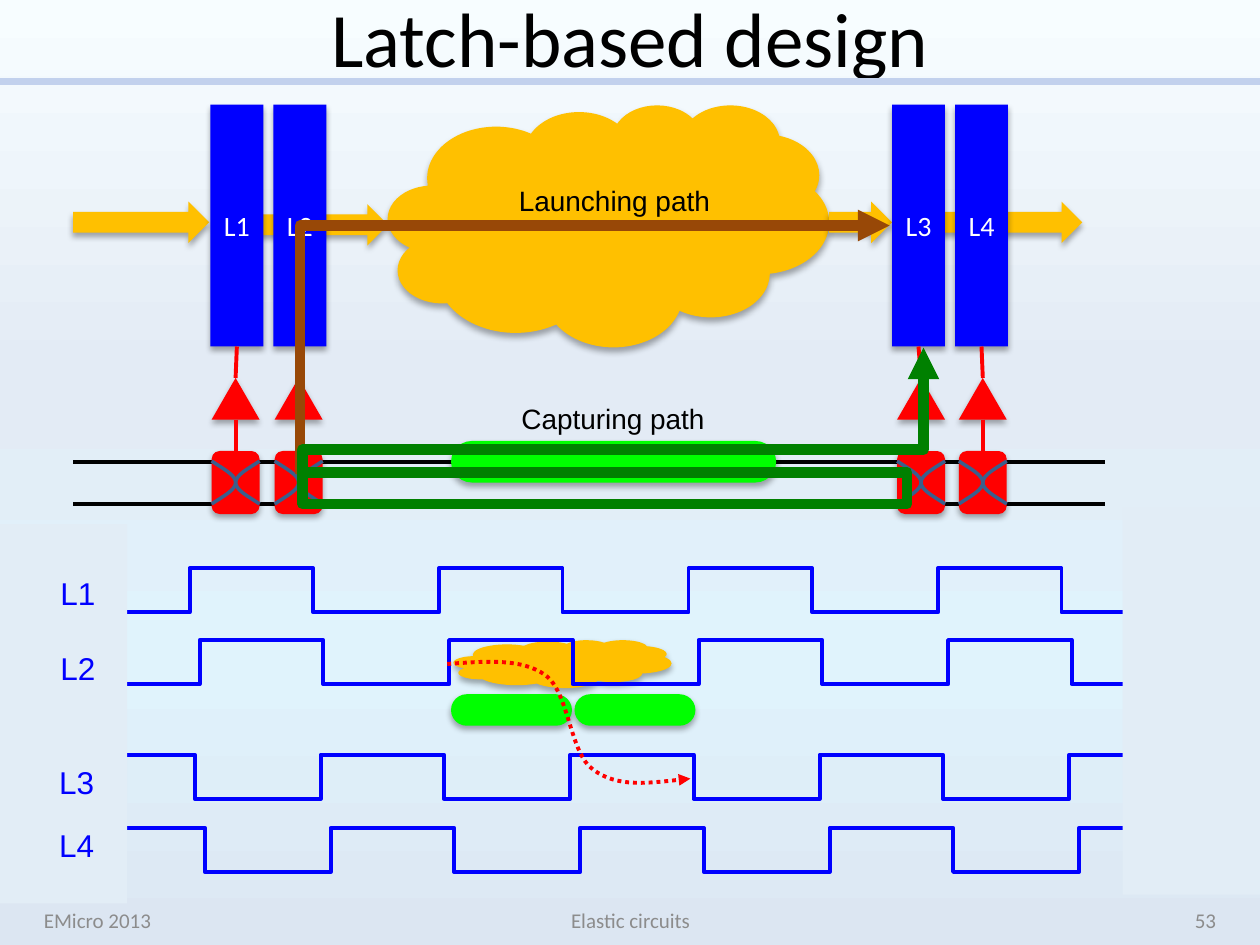
"""Build the latch-based design slide with its datapath, clock waves and timing paths."""
import lxml.etree
import pptx
import pptx.dml.color
import pptx.enum.dml
import pptx.enum.shapes
import pptx.enum.text
import pptx.oxml.ns
import pptx.util

PX = 9144
RGB = pptx.dml.color.RGBColor
BLACK, WHITE, GRAY = RGB(0, 0, 0), RGB(255, 255, 255), RGB(0x8C, 0x8C, 0x8C)
BLUE, RED, LIME = RGB(0, 0, 255), RGB(255, 0, 0), RGB(0, 255, 0)
GOLD, BROWN, GREEN = RGB(0xFF, 0xC0, 0), RGB(0x98, 0x48, 0x07), RGB(0, 0x80, 0)
STEEL, RULE, COVER = RGB(0x3A, 0x5F, 0x8C), RGB(0xC2, 0xD1, 0xED), RGB(0xE2, 0xED, 0xF6)
SKY = [(0, RGB(0xF7, 0xFD, 0xFF)), (40, RGB(0xE3, 0xEB, 0xF5)),
       (70, RGB(0xE0, 0xF3, 0xFC)), (100, RGB(0xDC, 0xE6, 0xF2))]
SHAPE = pptx.enum.shapes.MSO_SHAPE
STRAIGHT = pptx.enum.shapes.MSO_CONNECTOR.STRAIGHT
ELBOW = pptx.enum.shapes.MSO_CONNECTOR.ELBOW
LEFT, CENTER, RIGHT = (pptx.enum.text.PP_ALIGN.LEFT, pptx.enum.text.PP_ALIGN.CENTER,
                       pptx.enum.text.PP_ALIGN.RIGHT)
MIDDLE, TOP = pptx.enum.text.MSO_ANCHOR.MIDDLE, pptx.enum.text.MSO_ANCHOR.TOP
qn = pptx.oxml.ns.qn
sub = lxml.etree.SubElement

prs = pptx.Presentation()
prs.slide_width, prs.slide_height = 1000 * PX, 750 * PX
s = prs.slides.add_slide(prs.slide_layouts[5])

fill = s.background.fill
fill.gradient()
fill.gradient_angle = 270
stops = s._element.xpath(".//a:gsLst")[0]
for stop in list(stops):
    stops.remove(stop)
for pos, color in SKY:
    stop = sub(stops, qn("a:gs"), pos=str(pos * 1000))
    sub(stop, qn("a:srgbClr"), val=str(color))


def add_block(kind, box, color, shadow=True):
    sp = s.shapes.add_shape(kind, *(v * PX for v in box))
    sp.fill.solid()
    sp.fill.fore_color.rgb = color
    sp.line.fill.background()
    sp.shadow.inherit = False
    if shadow:
        effects = sp._element.spPr.find(qn("a:effectLst"))
        outer = sub(effects, qn("a:outerShdw"), blurRad="44450", dist="27940",
                    dir="5400000", rotWithShape="0")
        rgb = sub(outer, qn("a:srgbClr"), val="000000")
        sub(rgb, qn("a:alpha"), val="32000")
    return sp


def add_line(kind, points, color, width=2.25):
    if kind in (STRAIGHT, ELBOW):
        sp = s.shapes.add_connector(kind, *(v * PX for point in points for v in point))
        sub(sp._element.spPr, qn("a:effectLst"))
    else:
        builder = s.shapes.build_freeform(*points[0], scale=PX)
        builder.add_line_segments(points[1:], close=False)
        sp = builder.convert_to_shape()
        sp.fill.background()
        sp.shadow.inherit = False
    if kind == "curve":
        segments = sp._element.xpath(".//a:lnTo")
        for i in range(0, len(segments), 3):
            bezier = sub(segments[i].getparent(), qn("a:cubicBezTo"))
            for segment in segments[i:i + 3]:
                bezier.append(segment[0])
                segment.getparent().remove(segment)
    sp.line.color.rgb = color
    sp.line.width = pptx.util.Pt(width)
    return sp


add_line(STRAIGHT, [(0, 65), (1000, 65)], RULE, 4)
add_block(SHAPE.CLOUD, (360, 508, 173, 38), GOLD)

for x0, low, rises in [(100, 486, 4), (108, 543, 4), (6, 634, 5), (14, 692, 5)]:
    for i in range(rises):
        x = x0 + 198 * i
        add_line(ELBOW, [(x, low), (x + 101, low - 35)], BLUE)
        if i < 4:
            add_line(ELBOW, [(x + 199, low), (x + 98, low - 35)], BLUE)
add_line(STRAIGHT, [(99, 543), (124, 543)], BLUE)
add_block(SHAPE.RECTANGLE, (891, 403, 109, 307), COVER, False)
add_block(SHAPE.RECTANGLE, (0, 416, 101, 301), COVER, False)

for y in (367, 400):
    add_line(STRAIGHT, [(58, y), (877, y)], BLACK)
add_block(SHAPE.CLOUD, (308, 83, 350, 192), GOLD)
for x, y, w in [(58, 160, 108), (196, 162, 112), (658, 160, 50), (742, 160, 117)]:
    add_block(SHAPE.RIGHT_ARROW, (x, y, w, 33), GOLD)
for x, y, w, h in [(358, 350, 258, 33), (358, 551, 96, 25), (456, 551, 96, 25)]:
    add_block(SHAPE.ROUNDED_RECTANGLE, (x, y, w, h), LIME).adjustments[0] = 0.5

runs = []
for name, x, x_gate in [("L1", 167, 168), ("L2", 217, 218), ("L3", 708, 712), ("L4", 758, 761)]:
    bar = add_block(SHAPE.RECTANGLE, (x, 83, 42, 192), BLUE)
    bar.text_frame.vertical_anchor = MIDDLE
    p = bar.text_frame.paragraphs[0]
    p.alignment = CENTER
    runs.append((p.add_run(), name, 16, "Calibri", WHITE))
    driver = add_block(SHAPE.ISOSCELES_TRIANGLE, (x_gate, 300, 38, 33), RED)
    gate = add_block(SHAPE.ROUNDED_RECTANGLE, (x_gate, 358, 38, 50), RED)
    wire = add_line(STRAIGHT, [(x + 21, 275), (x_gate + 19, 300)], RED)
    wire.begin_connect(bar, 2)
    wire.end_connect(driver, 0)
    wire = add_line(STRAIGHT, [(x_gate + 19, 333), (x_gate + 19, 358)], RED)
    wire.end_connect(gate, 0)
    for edge, d in [(x_gate, 1), (x_gate + 38, -1)]:
        mid = edge + 19 * d
        add_line("curve", [(edge, 366), (edge + 9 * d, 372), (mid, 377), (mid, 383),
                           (mid, 389), (edge + 9 * d, 394), (edge, 400)], STEEL, 2)

transfer = add_line("curve", [(355, 527), (384, 525), (414, 522), (433, 536), (452, 550),
                              (452, 598), (471, 611), (490, 625), (519, 621), (548, 618)], RED)
transfer.line.dash_style = pptx.enum.dml.MSO_LINE.ROUND_DOT
launching = add_line("polyline", [(238, 376), (238, 179), (706, 179)], BROWN, 6)
capturing = add_line("polyline", [(236, 375), (720, 375), (720, 400), (240, 400),
                                  (240, 357), (733, 357), (733, 276)], GREEN, 6)
for sp in (transfer, launching, capturing):
    sub(sp.line._get_or_add_ln(), qn("a:tailEnd"), type="triangle")

title = s.shapes.title
for name, value in dict(left=50, top=0, width=900, height=58).items():
    setattr(title, name, value * PX)
title.text_frame.vertical_anchor = MIDDLE
p = title.text_frame.paragraphs[0]
p.alignment = CENTER
runs.append((p.add_run(), "Latch-based design", 44, "Calibri", BLACK))

for text, box, size, font, color, align, anchor in [
    ("EMicro 2013", (25, 710, 233, 40), 12, "Calibri", GRAY, LEFT, MIDDLE),
    ("Elastic circuits", (342, 710, 317, 40), 12, "Calibri", GRAY, CENTER, MIDDLE),
    ("53", (742, 710, 233, 40), 12, "Calibri", GRAY, RIGHT, MIDDLE),
    ("L1", (38, 451, 48, 40), 18, "Arial", BLUE, LEFT, TOP),
    ("L2", (38, 510, 48, 40), 18, "Arial", BLUE, LEFT, TOP),
    ("L3", (37, 601, 48, 40), 18, "Arial", BLUE, LEFT, TOP),
    ("L4", (37, 651, 48, 40), 18, "Arial", BLUE, LEFT, TOP),
    ("Launching path", (402, 141, 173, 37), 16, "Arial", BLACK, LEFT, TOP),
    ("Capturing path", (404, 314, 167, 37), 16, "Arial", BLACK, LEFT, TOP),
]:
    tf = s.shapes.add_textbox(*(v * PX for v in box)).text_frame
    tf.word_wrap = anchor == MIDDLE
    tf.vertical_anchor = anchor
    p = tf.paragraphs[0]
    p.alignment = align
    runs.append((p.add_run(), text, size, font, color))

for r, text, size, font, color in runs:
    r.text = text
    r.font.color.rgb = color
    for name, value in dict(size=pptx.util.Pt(size), name=font).items():
        setattr(r.font, name, value)

prs.save("out.pptx")
